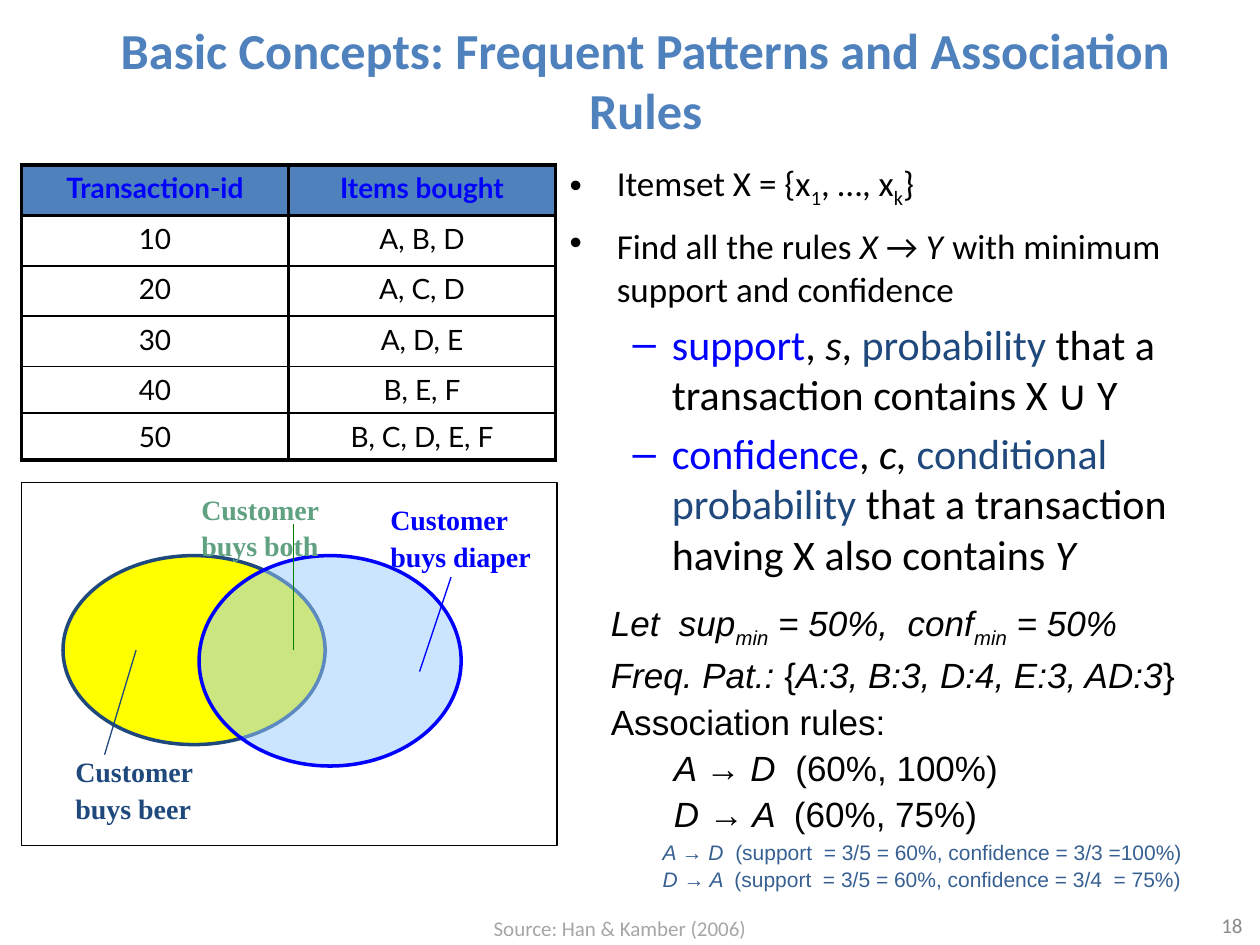
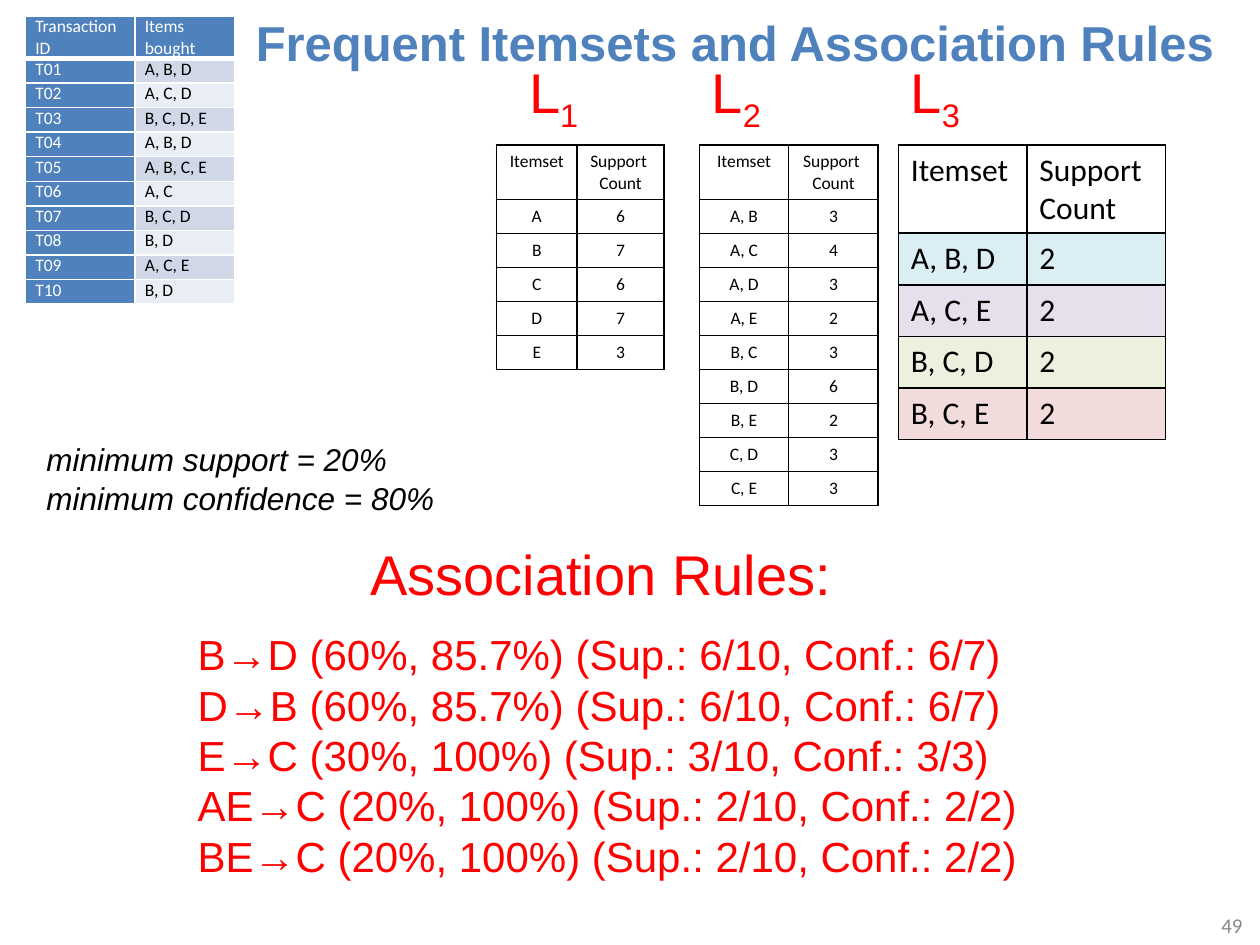
from dataclasses import dataclass

from lxml.etree import SubElement
from pptx import Presentation
from pptx.dml.color import RGBColor
from pptx.enum.shapes import MSO_CONNECTOR, MSO_SHAPE
from pptx.enum.text import MSO_ANCHOR, PP_ALIGN
from pptx.oxml import parse_xml
from pptx.oxml.ns import nsdecls, qn
from pptx.util import Inches, Pt

C = {
    "accent": "4F81BD", "navy": "1F497D", "steel": "376092", "blue": "0000FF",
    "red": "FF0000", "black": "000000", "white": "FFFFFF", "yellow": "FFFF00",
    "sky": "99CCFF", "green": "008000", "sage": "5FA180", "number": "898989",
    "source": "A6A6A6", "band1": "D0D8E8", "band2": "E9EDF4", "aqua": "DBEEF4",
    "lilac": "E6E0EC", "lime": "EBF1DE", "rose": "F2DCDB",
}
LEFT, CENTER, RIGHT = PP_ALIGN.LEFT, PP_ALIGN.CENTER, PP_ALIGN.RIGHT


@dataclass
class Run:
    """A piece of text that differs from the rest of its paragraph."""
    text: str
    italic: bool = False
    sub: bool = False
    color: str = ""
    size: float = 0


def it(text, **kw):
    """Return an italic run."""
    return Run(text, italic=True, **kw)


def rgb(name):
    """Return a palette colour."""
    return RGBColor.from_string(C[name])


def style(r, size, font, color, bold=False, italic=False):
    """Format one run."""
    f = r.font
    f.size, f.name, f.bold, f.italic = Pt(size), font, bold, italic
    f.color.rgb = rgb(color)


def fill_paragraph(p, runs, size, font, color, bold=False):
    """Add plain strings and Run items to a paragraph."""
    for item in runs:
        item = Run(item) if isinstance(item, str) else item
        r = p.add_run()
        r.text = item.text
        style(r, item.size or size, font, item.color or color, bold, item.italic)
        if item.sub:
            r.font._element.set("baseline", "-25000")


def write(tf, paragraphs, size, font="Arial", color="black", bold=False,
          align=LEFT, spacing=None):
    """Fill a text frame with paragraphs, each a list of runs."""
    for i, runs in enumerate(paragraphs):
        p = tf.paragraphs[0] if i == 0 else tf.add_paragraph()
        p.alignment = align
        if spacing:
            p.line_spacing = spacing
        fill_paragraph(p, runs, size, font, color, bold)


def text_box(s, box, paragraphs, size, wrap=False, **kw):
    """Add a text box and return its frame."""
    tf = s.shapes.add_textbox(*map(Inches, box)).text_frame
    tf.word_wrap = wrap
    write(tf, paragraphs, size, **kw)
    return tf


def place(shape, box):
    """Move a placeholder to a box."""
    shape.left, shape.top, shape.width, shape.height = map(Inches, box)


def new_slide(prs, layout, number, title, box, size, font, align, anchor):
    """Add a slide with its title and page number."""
    s = prs.slides.add_slide(prs.slide_layouts[layout])
    place(s.shapes.title, box)
    tf = s.shapes.title.text_frame
    tf.text = title
    tf.vertical_anchor = anchor
    tf.paragraphs[0].alignment = align
    style(tf.paragraphs[0].runs[0], size, font, "accent", bold=True)
    page = text_box(s, (9.33, 7.22, 0.63, 0.25), [[number]], 12, wrap=True,
                    font="Calibri", color="number", align=RIGHT)
    page.vertical_anchor = MSO_ANCHOR.MIDDLE
    return s


def set_borders(cell, color, widths):
    """Draw the left, right, top and bottom cell borders."""
    tcPr = cell._tc.get_or_add_tcPr()
    for i, (side, width) in enumerate(zip("LRTB", widths)):
        ln = parse_xml(
            f'<a:ln{side} {nsdecls("a")} w="{int(Pt(width))}"><a:solidFill>'
            f'<a:srgbClr val="{C[color]}"/></a:solidFill></a:ln{side}>')
        tcPr.insert(i, ln)


def table(s, at, cols, heights, rows, size, font="Calibri", align=CENTER,
          bold_header=False, inset=(0.1, 0.05), border="black",
          look=lambda r, c: (None, "black"), widths=lambda r: (1, 1, 1, 1)):
    """Add a table; look gives fill and text colour, widths the borders."""
    size_in = (sum(cols), sum(heights))
    frame = s.shapes.add_table(len(rows), len(cols), *map(Inches, at + size_in))
    tbl = frame.table
    tbl.first_row = tbl.horz_banding = False
    for column, width in zip(tbl.columns, cols):
        column.width = Inches(width)
    for r, (row, height) in enumerate(zip(rows, heights)):
        tbl.rows[r].height = Inches(height)
        for c, text in enumerate(row):
            cell = tbl.cell(r, c)
            fill, color = look(r, c)
            cell.margin_left = cell.margin_right = Inches(inset[0])
            cell.margin_top = cell.margin_bottom = Inches(inset[1])
            cell.text = text
            p = cell.text_frame.paragraphs[0]
            p.alignment = align
            for run in p.runs:
                style(run, size, font, color, bold_header and r == 0)
            if fill:
                cell.fill.solid()
                cell.fill.fore_color.rgb = rgb(fill)
            else:
                cell.fill.background()
            set_borders(cell, border, widths(r))


def outlined(s, kind, box, line, width, fill=None, alpha=None):
    """Add a preset shape with an outline and an optional fill."""
    shape = s.shapes.add_shape(kind, *map(Inches, box))
    shape.shadow.inherit = False
    shape.line.color.rgb = rgb(line)
    shape.line.width = Pt(width)
    if fill:
        shape.fill.solid()
        shape.fill.fore_color.rgb = rgb(fill)
    else:
        shape.fill.background()
    if alpha:
        clr = shape.element.spPr.find(".//" + qn("a:srgbClr"))
        SubElement(clr, qn("a:alpha")).set("val", str(alpha * 1000))


def venn(s, x, y, w, h):
    """Draw the diagram of beer and diaper customers."""
    outlined(s, MSO_SHAPE.OVAL, (x + 0.33, y + 0.58, 2.08, 1.5), "navy", 2, "yellow")
    outlined(s, MSO_SHAPE.OVAL, (x + 1.41, y + 0.58, 2.08, 1.67), "blue", 2, "sky", 50)
    for x1, y1, x2, y2, color in [(0.91, 1.33, 0.66, 2.16, "navy"),
                                  (3.16, 1.5, 3.41, 0.75, "blue"),
                                  (2.16, 1.33, 2.16, 0.33, "green")]:
        ends = map(Inches, (x + x1, y + y1, x + x2, y + y2))
        line = s.shapes.add_connector(MSO_CONNECTOR.STRAIGHT, *ends)
        line.line.color.rgb = rgb(color)
        line.line.width = Pt(0.75)
        SubElement(line._element.spPr, qn("a:effectLst"))
    for dx, dy, width, item, color in [(2.83, 0.08, 1.33, "diaper", "blue"),
                                       (1.33, 0, 1.14, "both", "sage"),
                                       (0.33, 2.08, 1.14, "beer", "navy")]:
        text_box(s, (x + dx, y + dy, width, 0.69), [["Customer"], [f"buys {item}"]],
                 16, wrap=item != "beer", font="Times New Roman", color=color,
                 bold=True, spacing=1.1)
    outlined(s, MSO_SHAPE.RECTANGLE, (x, y, w, h), "black", 0.75)


def definitions(s, box):
    """Fill the body placeholder with the definitions."""
    body = s.placeholders[1]
    place(body, box)
    paragraphs = [
        (0, 20, ["Itemset X = {x", Run("1", sub=True), ", …, x",
                 Run("k", sub=True), "}"]),
        (0, 20, ["Find all the rules ", it("X "), "→ ", it("Y"), it(" ", size=24),
                 "with minimum support and confidence"]),
        (1, 24, [Run("support", color="blue"), ", ", it("s"), ", ",
                 Run("probability", color="navy"),
                 " that a transaction contains X ∪ Y"]),
        (1, 24, [Run("confidence", color="blue"), ", ", it("c, "),
                 Run("conditional probability", color="navy"),
                 " that a transaction having X also contains ", it("Y")]),
    ]
    tf = body.text_frame
    for i, (level, size, runs) in enumerate(paragraphs):
        p = tf.paragraphs[0] if i == 0 else tf.add_paragraph()
        p.level = level
        fill_paragraph(p, runs, size, "Calibri", "black")


def rule(left, right, values):
    """Return the runs of one association rule."""
    return [it(f"{left} "), "→", it(f" {right}  "), values]


def worked_example(s, x, y):
    """Write the thresholds, the frequent patterns and the rules."""
    tf = text_box(s, (x, y, 5, 1.83), [
        [it("Let  sup"), it("min", sub=True), it(" = 50%,  conf"),
         it("min", sub=True), it(" = 50%")],
        [it("Freq. Pat.: "), "{", it("A:3, B:3, D:4, E:3, AD:3"), "}"],
        ["Association rules:"],
        rule("A", "D", "(60%, 100%)"),
        rule("D", "A", "(60%, 75%)"),
    ], 20, wrap=True, spacing=1.1)
    for p in tf.paragraphs[3:]:
        p.level = 1
        p._p.get_or_add_pPr().set("marL", str(Inches(0.5)))
    text_box(s, (x + 0.41, y + 1.9, 4.65, 0.52), [
        rule("A", "D", "(support  = 3/5 = 60%, confidence = 3/3 =100%)"),
        rule("D", "A", "(support  = 3/5 = 60%, confidence = 3/4  = 75%)"),
    ], 12, wrap=True, color="steel", spacing=1.1)


def concepts_slide(prs):
    """Build the slide of basic concepts."""
    s = new_slide(prs, 1, "18", "Basic Concepts: Frequent Patterns and Association Rules",
                  (0.75, 0.13, 8.75, 1), 28.8, "Calibri", CENTER, MSO_ANCHOR.MIDDLE)
    definitions(s, (4.42, 1.23, 5.42, 3.5))
    worked_example(s, 4.75, 4.69)
    venn(s, 0.17, 3.83, 4.25, 2.88)
    rows = [("Transaction-id", "Items bought"), ("10", "A, B, D"), ("20", "A, C, D"),
            ("30", "A, D, E"), ("40", "B, E, F"), ("50", "B, C, D, E, F")]
    table(s, (0.17, 1.31), [2.12] * 2, [0.4] * 4 + [0.37] * 2, rows, 16, font="Lato",
          bold_header=True,
          look=lambda r, c: (None, "black") if r else ("accent", "blue"),
          widths=lambda r: (2.25, 2.25, 2.25 if r < 2 else 1,
                            2.25 if r in (0, 5) else 1))
    text_box(s, (3.66, 7.22, 2.52, 0.3), [["Source: Han & Kamber (2006)"]], 12,
             wrap=True, font="Calibri", color="source", align=CENTER)


def itemset_table(s, x, level, label_dx, cols, heights, counts, size=10, **kw):
    """Add a table of support counts under its L label."""
    text_box(s, (x + label_dx, 0.41, 0.62, 0.64),
             [["L", Run(str(level), sub=True)]], 32, color="red")
    rows = [("Itemset", "Support \vCount")]
    rows += [(", ".join(items), str(n)) for items, n in counts.items()]
    table(s, (x, 1.15), cols, heights, rows, size, **kw)


def transactions(s, x, y):
    """Add the banded table of transactions."""
    baskets = "ABD ACD BCDE ABD ABCE AC BCD BD ACE BD".split()
    rows = [("Transaction ID", "Items bought")]
    rows += [(f"T{i:02}", ", ".join(b)) for i, b in enumerate(baskets, 1)]

    def look(r, c):
        """Colour the header row and first column, band the rest."""
        if r == 0 or c == 0:
            return "accent", "white"
        return ("band1" if r % 2 else "band2"), "black"

    table(s, (x, y), [0.87, 0.79], [0.33] + [1.95 / 10] * 10, rows, 10, align=LEFT,
          inset=(0.08, 0), border="white", look=look,
          widths=lambda r: (1, 1, 3 if r == 1 else 1, 1 if r else 3))


def itemsets_slide(prs):
    """Build the slide of frequent itemsets and the rules found."""
    s = new_slide(prs, 5, "49", "Frequent Itemsets and Association Rules",
                  (1.93, 0.05, 7.9, 0.57), 28, "Arial", LEFT, MSO_ANCHOR.TOP)
    s.shapes.title.text_frame.word_wrap = False
    transactions(s, 0.2, 0.13)
    itemset_table(s, 3.94, 1, 0.16, [0.64, 0.69], [0.43] + [0.27] * 5,
                  {"A": 6, "B": 7, "C": 6, "D": 7, "E": 3})
    itemset_table(s, 5.55, 2, 0, [0.71] * 2, [0.43] + [0.27] * 9,
                  {"AB": 3, "AC": 4, "AD": 3, "AE": 2, "BC": 3, "BD": 6,
                   "BE": 2, "CD": 3, "CE": 3})
    fills = [None, "aqua", "lilac", "lime", "rose"]
    itemset_table(s, 7.13, 3, 0, [1.02, 1.1], [0.7] + [0.41] * 4,
                  {"ABD": 2, "ACE": 2, "BCD": 2, "BCE": 2}, size=18, align=LEFT,
                  look=lambda r, c: (fills[r], "black"))
    text_box(s, (0.27, 3.44, 3.15, 0.4), [[it("minimum support = 20%")]], 18, wrap=True)
    text_box(s, (0.27, 3.75, 3.31, 0.4), [[it("minimum confidence = 80%")]], 18)
    text_box(s, (2.84, 4.23, 4.01, 0.64), [["Association Rules:"]], 32, color="red")
    found = [("B→D", "60%, 85.7%", "6/10", "6/7"), ("D→B", "60%, 85.7%", "6/10", "6/7"),
             ("E→C", "30%, 100%", "3/10", "3/3"), ("AE→C", "20%, 100%", "2/10", "2/2"),
             ("BE→C", "20%, 100%", "2/10", "2/2")]
    text_box(s, (1.47, 4.94, 6.76, 2.12),
             [[f"{name} ({values}) (Sup.: {sup}, Conf.: {conf})"]
              for name, values, sup, conf in found], 24, color="red")


def main():
    """Build and save the presentation."""
    prs = Presentation()
    prs.slide_width, prs.slide_height = Inches(10), Inches(7.5)
    concepts_slide(prs)
    itemsets_slide(prs)
    prs.save("out.pptx")


if __name__ == "__main__":
    main()
